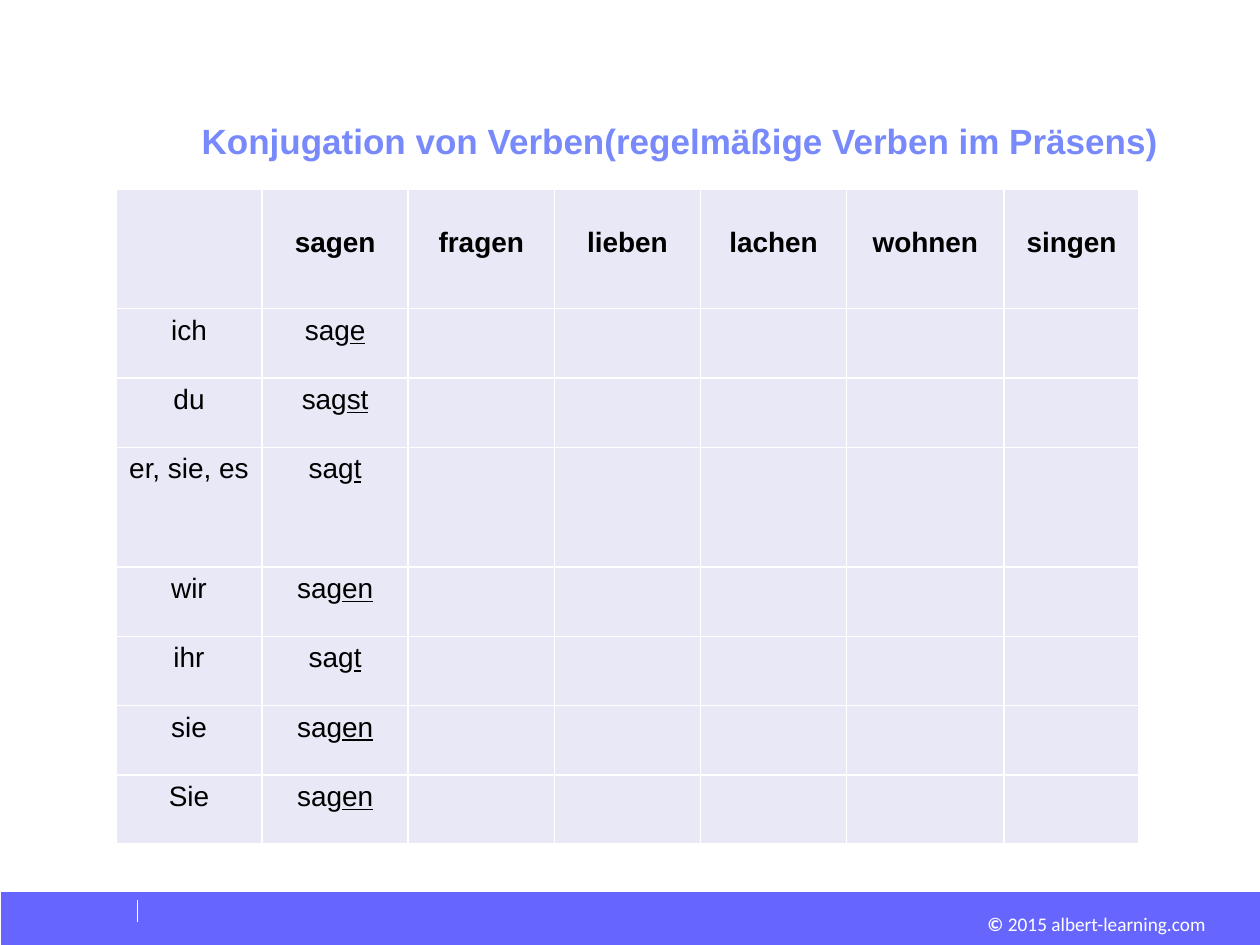
from lxml.etree import SubElement
from pptx import Presentation
from pptx.dml.color import RGBColor
from pptx.enum.shapes import MSO_CONNECTOR as Connector, MSO_SHAPE as Shape
from pptx.enum.text import MSO_ANCHOR as Anchor, PP_ALIGN as Align
from pptx.oxml.ns import qn
from pptx.util import Inches, Pt

WHITE = RGBColor(0xFF, 0xFF, 0xFF)
BLACK = RGBColor(0x00, 0x00, 0x00)
FOOTER_BLUE = RGBColor(0x66, 0x66, 0xFF)
TITLE_BLUE = RGBColor(0x78, 0x89, 0xFB)
CELL_LILAC = RGBColor(0xE8, 0xE8, 0xF6)

TITLE_FONT = {"name": "Arial", "size": Pt(20), "bold": True}
HEAD_FONT = {"name": "Arial", "size": Pt(16), "bold": True}
BODY_FONT = {"name": "Arial", "size": Pt(16), "bold": False}
FOOTER_FONT = {"name": "Calibri", "size": Pt(11)}

VERBS = ["sagen", "fragen", "lieben", "lachen", "wohnen", "singen"]
STEM = "sag"
ENDINGS = [("ich", "e"), ("du", "st"), ("er, sie, es", "t"), ("wir", "en"),
           ("ihr", "t"), ("sie", "en"), ("Sie", "en")]
COLUMN_WIDTHS = [1.16] * 5 + [1.25, 1.07]
TALL_ROW, ROW = 0.95, 0.55
ROW_HEIGHTS = [TALL_ROW, ROW, ROW, TALL_ROW] + [ROW] * 4


def add_span(para, text, color, formats):
    span = para.add_run()
    span.text = text
    span.font.color.rgb = color
    for name, value in formats.items():
        setattr(span.font, name, value)


def add_title(page, left, top, width, height):
    title = page.shapes.title
    title.left, title.top = Inches(left), Inches(top)
    title.width, title.height = Inches(width), Inches(height)
    frame = title.text_frame
    frame.word_wrap = True
    frame.vertical_anchor = Anchor.MIDDLE
    para = frame.paragraphs[0]
    para.alignment = Align.LEFT
    para.line_spacing = 0.9
    indents = para._p.get_or_add_pPr()
    indents.set("marL", str(Inches(2.25)))
    indents.set("indent", str(Inches(-0.25)))
    add_span(para, "Konjugation von Verben(regelmäßige Verben im Präsens)",
             TITLE_BLUE, TITLE_FONT)


def style_cell(cell):
    """Give a cell white borders and a lilac fill."""
    properties = cell._tc.get_or_add_tcPr()
    for side in ("lnL", "lnR", "lnT", "lnB"):
        border = SubElement(properties, qn(f"a:{side}"), w=str(Pt(1)))
        fill = SubElement(border, qn("a:solidFill"))
        SubElement(fill, qn("a:srgbClr"), val=str(WHITE))
    cell.fill.solid()
    cell.fill.fore_color.rgb = CELL_LILAC


def fill_cell(cell, text, formats, ending=""):
    """Write centred text, with an underlined ending if there is one."""
    para = cell.text_frame.paragraphs[0]
    para.alignment = Align.CENTER
    add_span(para, text, BLACK, formats)
    if ending:
        add_span(para, ending, BLACK, {**formats, "underline": True})


def add_verb_table(page, left, top):
    frame = page.shapes.add_table(
        len(ROW_HEIGHTS), len(COLUMN_WIDTHS), Inches(left), Inches(top),
        Inches(sum(COLUMN_WIDTHS)), Inches(sum(ROW_HEIGHTS)))
    table = frame.table
    table.first_row = table.horz_banding = False
    for column, width in zip(table.columns, COLUMN_WIDTHS):
        column.width = Inches(width)
    for row, height in zip(table.rows, ROW_HEIGHTS):
        row.height = Inches(height)
    for cell in table.iter_cells():
        style_cell(cell)

    for index, verb in enumerate(VERBS, start=1):
        cell = table.cell(0, index)
        cell.margin_top = Inches(0.3)
        fill_cell(cell, verb, HEAD_FONT)
    for index, (pronoun, ending) in enumerate(ENDINGS, start=1):
        fill_cell(table.cell(index, 0), pronoun, BODY_FONT)
        fill_cell(table.cell(index, 1), STEM, BODY_FONT, ending)


def add_footer(page, left, top, width, height):
    bar = page.shapes.add_shape(Shape.RECTANGLE, Inches(left), Inches(top),
                                Inches(width), Inches(height))
    bar.shadow.inherit = False
    bar.fill.solid()
    bar.fill.fore_color.rgb = FOOTER_BLUE
    bar.line.fill.background()

    tick_x = Inches(left + 1.08)
    tick = page.shapes.add_connector(Connector.STRAIGHT, tick_x, Inches(top + 0.06),
                                     tick_x, Inches(top + 0.24))
    tick.line.color.rgb = WHITE
    tick.line.width = Pt(0.75)
    SubElement(tick._element.spPr, qn("a:effectLst"))

    box = page.shapes.add_textbox(Inches(left + width - 2.21), Inches(top + 0.16),
                                  Inches(1.78), Inches(0.19))
    frame = box.text_frame
    frame.word_wrap = False
    for side in ("left", "right", "top", "bottom"):
        setattr(frame, f"margin_{side}", 0)
    para = frame.paragraphs[0]
    para.alignment = Align.RIGHT
    add_span(para, "© ", WHITE, {**FOOTER_FONT, "bold": True})
    add_span(para, "2015 albert-learning.com", WHITE, {**FOOTER_FONT, "bold": False})


def main():
    deck = Presentation()
    deck.slide_width, deck.slide_height = Inches(10), Inches(7.5)
    page = deck.slides.add_slide(deck.slide_layouts[5])
    add_footer(page, 0.01, 7.08, 9.99, 0.42)
    add_title(page, -0.5, 0.94, 10.06, 0.39)
    add_verb_table(page, 0.92, 1.5)
    deck.save("out.pptx")


if __name__ == "__main__":
    main()
